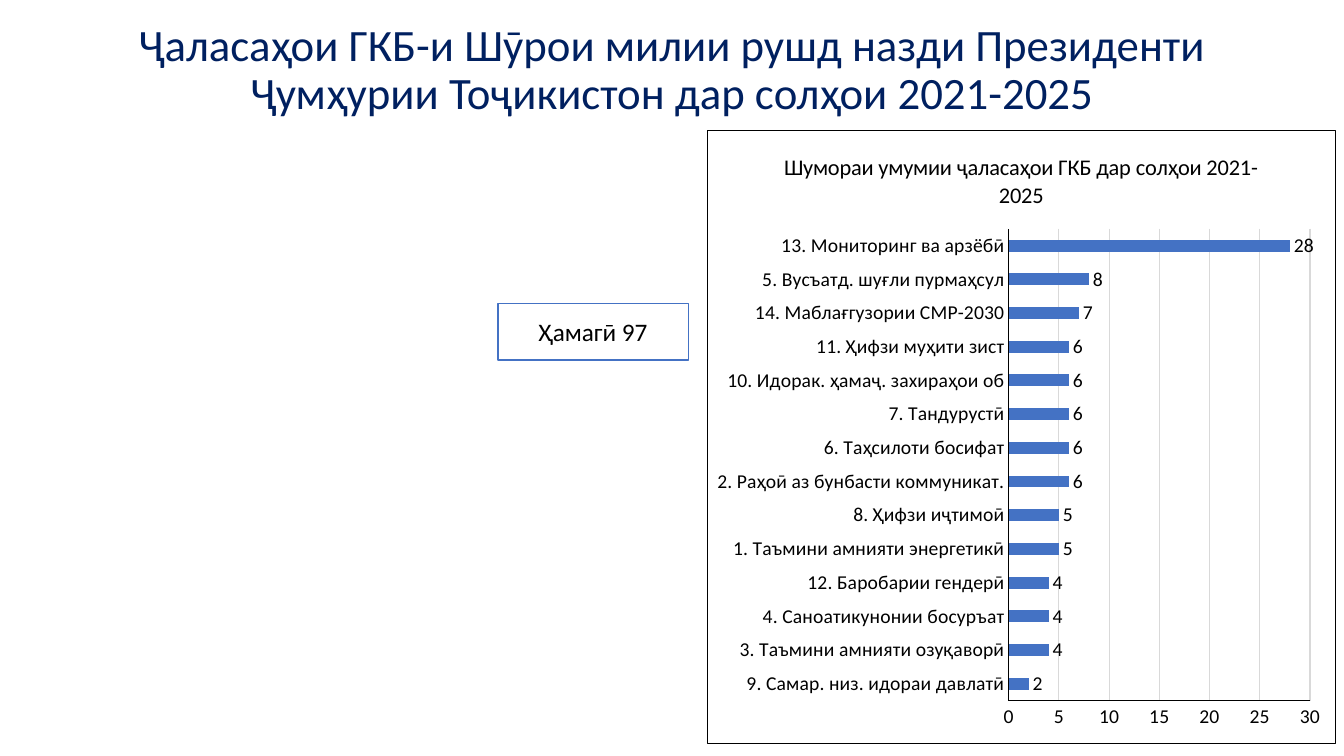
import pptx
import pptx.util
import pptx.oxml
import pptx.oxml.ns
import pptx.dml.color
import pptx.chart.data
import pptx.enum.chart
import pptx.enum.shapes
import pptx.enum.text

Cm = pptx.util.Cm
Pt = pptx.util.Pt
enum = pptx.enum
ns = pptx.oxml.ns


def rgb(code):
    return pptx.dml.color.RGBColor.from_string(code)


def style(font, size, code="000000"):
    font.name = "Calibri"
    font.size = Pt(size)
    font.bold = False
    font.color.rgb = rgb(code)


deck = pptx.Presentation()
deck.slide_width = Cm(33.87)
deck.slide_height = Cm(19.05)
slide = deck.slides.add_slide(deck.slide_layouts[5])

title = slide.shapes.title
title.left, title.top = Cm(2.34), Cm(1.02)
title.width, title.height = Cm(29.21), Cm(1.55)
frame = title.text_frame
frame.text = "Ҷаласаҳои ГКБ-и Шӯрои милии рушд назди Президенти Ҷумҳурии Тоҷикистон дар солҳои 2021-2025"
frame.word_wrap = True
frame.auto_size = enum.text.MSO_AUTO_SIZE.NONE
frame.vertical_anchor = enum.text.MSO_ANCHOR.MIDDLE
head = frame.paragraphs[0]
head.alignment = enum.text.PP_ALIGN.CENTER
head.line_spacing = 0.9
style(head.runs[0].font, 32, "002060")

counts = {
    "9. Самар. низ. идораи давлатӣ": 2,
    "3. Таъмини амнияти озуқаворӣ": 4,
    "4. Саноатикунонии босуръат": 4,
    "12. Баробарии гендерӣ": 4,
    "1. Таъмини амнияти энергетикӣ": 5,
    "8. Ҳифзи иҷтимоӣ": 5,
    "2. Раҳоӣ аз бунбасти коммуникат.": 6,
    "6. Таҳсилоти босифат": 6,
    "7. Тандурустӣ": 6,
    "10. Идорак. ҳамаҷ. захираҳои об": 6,
    "11. Ҳифзи муҳити зист": 6,
    "14. Маблағгузории СМР-2030": 7,
    "5. Вусъатд. шуғли пурмаҳсул": 8,
    "13. Мониторинг ва арзёбӣ": 28,
}
data = pptx.chart.data.CategoryChartData()
data.categories = list(counts)
data.add_series("Series 1", list(counts.values()))
chart = slide.shapes.add_chart(
    enum.chart.XL_CHART_TYPE.BAR_CLUSTERED,
    Cm(17.81), Cm(3.28), Cm(15.85), Cm(15.47), data,
).chart
style(chart.font, 14)
chart.has_legend = False
chart.has_title = True
label = chart.chart_title.text_frame
label.text = "Шумораи умумии ҷаласаҳои ГКБ дар солҳои 2021-2025"
style(label.paragraphs[0].runs[0].font, 16)

for axis in (chart.category_axis, chart.value_axis):
    axis.major_tick_mark = enum.chart.XL_TICK_MARK.NONE
    axis.minor_tick_mark = enum.chart.XL_TICK_MARK.NONE
    axis.format.line.color.rgb = rgb("000000")
    axis.format.line.width = Pt(0.25)
    style(axis.tick_labels.font, 14)
scale = chart.value_axis
scale.minimum_scale, scale.maximum_scale, scale.major_unit = 0, 30, 5
scale.has_major_gridlines = True
scale.major_gridlines.format.line.color.rgb = rgb("D9D9D9")
scale.major_gridlines.format.line.width = Pt(0.75)

plot = chart.plots[0]
plot.gap_width = 182
plot.vary_by_categories = False
bars = plot.series[0].format.fill
bars.solid()
bars.fore_color.rgb = rgb("4472C4")
plot.has_data_labels = True
marks = plot.data_labels
marks.show_value = True
marks.position = enum.chart.XL_LABEL_POSITION.OUTSIDE_END
style(marks.font, 14)

root = chart.element
border = pptx.oxml.parse_xml(
    f'<c:spPr {ns.nsdecls("c", "a")}>'
    '<a:solidFill><a:srgbClr val="FFFFFF"/></a:solidFill>'
    '<a:ln w="9525"><a:solidFill><a:srgbClr val="000000"/></a:solidFill></a:ln>'
    '</c:spPr>'
)
root.find(ns.qn("c:chart")).addnext(border)

area = root.find(".//" + ns.qn("c:plotArea"))
for old in area.findall(ns.qn("c:layout")):
    area.remove(old)
parts = "".join(
    f'<c:{key} val="{val}"/>'
    for key, val in [
        ("layoutTarget", "inner"), ("xMode", "edge"), ("yMode", "edge"),
        ("x", 0.48), ("y", 0.16), ("w", 0.48), ("h", 0.77),
    ]
)
area.insert(0, pptx.oxml.parse_xml(
    f'<c:layout {ns.nsdecls("c")}><c:manualLayout>{parts}</c:manualLayout></c:layout>'
))

total = slide.shapes.add_shape(
    enum.shapes.MSO_SHAPE.RECTANGLE, Cm(12.55), Cm(7.65), Cm(4.8), Cm(1.42)
)
total.shadow.inherit = False
total.fill.solid()
total.fill.fore_color.rgb = rgb("FFFFFF")
total.line.color.rgb = rgb("4472C4")
total.line.width = Pt(1)
total.text_frame.text = "Ҳамагӣ 97"
total.text_frame.vertical_anchor = enum.text.MSO_ANCHOR.MIDDLE
line = total.text_frame.paragraphs[0]
line.alignment = enum.text.PP_ALIGN.CENTER
style(line.runs[0].font, 18)

deck.save("out.pptx")
